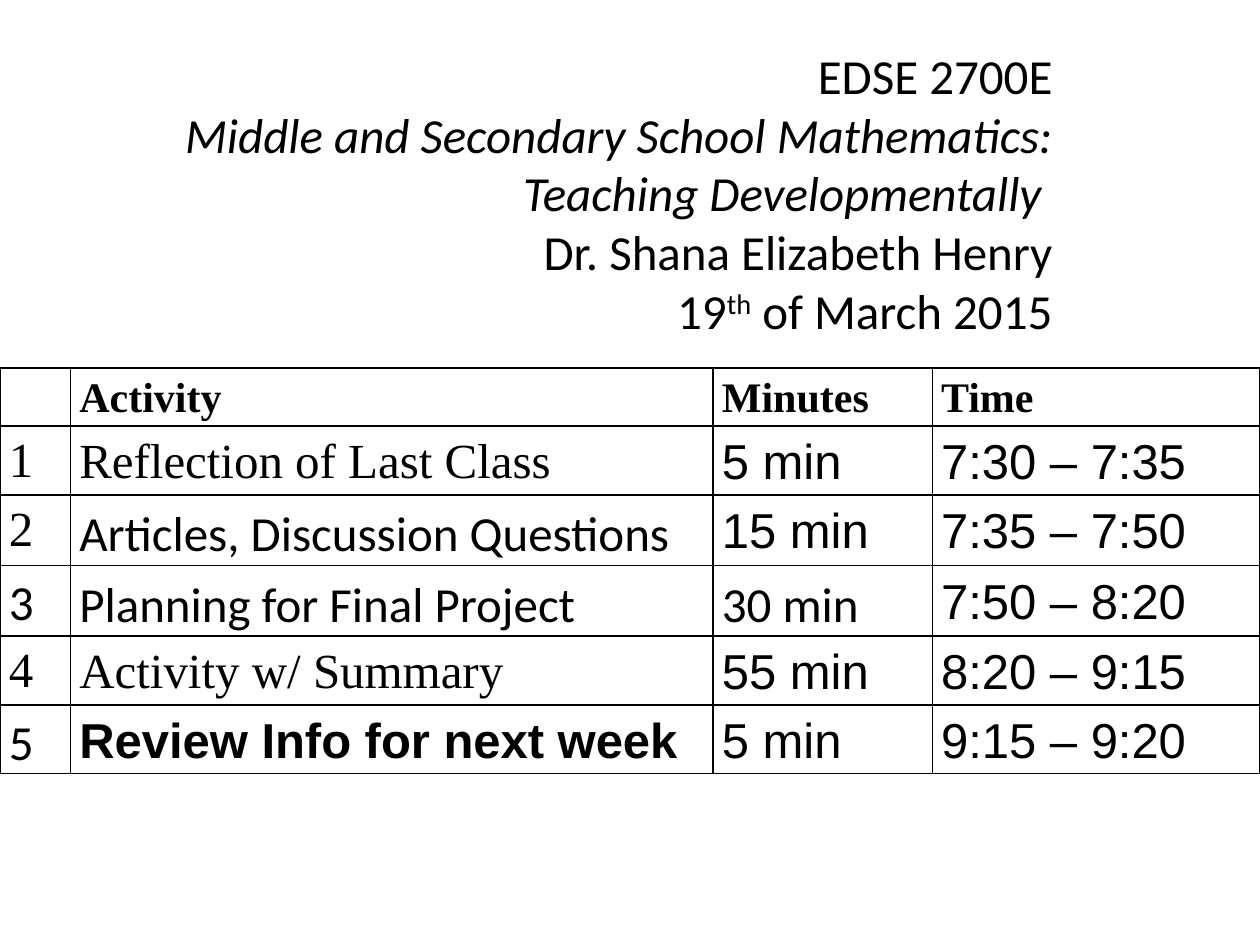
from lxml.etree import SubElement
from pptx import Presentation
from pptx.dml.color import RGBColor
from pptx.enum.text import PP_ALIGN as Align
from pptx.oxml.ns import qn
from pptx.util import Inches, Pt

COLORS = {"ink": "000000", "paper": "FFFFFF"}
SERIF, SANS, BODY = "Times New Roman", "Arial", "Calibri"

COURSE_LINES = [
    (["EDSE 2700E"], False),
    (["Middle and Secondary School Mathematics: Teaching Developmentally "], True),
    (["Dr. Shana Elizabeth Henry"], False),
    (["19", "th", " of March 2015"], False),
]
HEADINGS = ["", "Activity", "Minutes", "Time"]
AGENDA = [
    ["1", "Reflection of Last Class", "5 min", "7:30 – 7:35"],
    ["2", "Articles, Discussion Questions", "15 min", "7:35 – 7:50"],
    ["3", "Planning for Final Project", "30 min", "7:50 – 8:20"],
    ["4", "Activity w/ Summary", "55 min", "8:20 – 9:15"],
    ["5", "Review Info for next week", "5 min", "9:15 – 9:20"],
]
AGENDA_FONTS = [
    [SERIF, SERIF, SANS, SANS],
    [SERIF, BODY, SANS, SANS],
    [BODY, BODY, BODY, SANS],
    [SERIF, SERIF, SANS, SANS],
    [BODY, SANS, SANS, SANS],
]
COLUMN_WIDTHS = [0.56, 5.1, 1.74, 2.6]
ROW_HEIGHTS = [0.43, 0.53, 0.56, 0.56, 0.51, 0.54]


def style_font(font, name, size, bold=False, italic=False):
    """Set the typeface, size and emphasis in the ink colour."""
    font.name, font.size, font.bold, font.italic = name, Pt(size), bold, italic
    font.color.rgb = RGBColor.from_string(COLORS["ink"])


def add_borders(cell):
    """Draw a one-point line on all four sides of a cell."""
    properties = cell._tc.get_or_add_tcPr()
    for position, side in enumerate(("a:lnL", "a:lnR", "a:lnT", "a:lnB")):
        line = properties.makeelement(qn(side), {"w": str(Pt(1))})
        fill = SubElement(line, qn("a:solidFill"))
        SubElement(fill, qn("a:srgbClr"), val=COLORS["ink"])
        properties.insert(position, line)


def fill_cell(cell, text, name, size, bold, top):
    """Write one agenda cell; run fonts keep the row as low as its text."""
    cell.margin_left = cell.margin_right = Inches(0.07)
    cell.margin_top, cell.margin_bottom = Inches(top), 0
    cell.fill.solid()
    cell.fill.fore_color.rgb = RGBColor.from_string(COLORS["paper"])
    paragraph = cell.text_frame.paragraphs[0]
    paragraph.line_spacing = 1.15
    if text:
        run = paragraph.add_run()
        run.text = text
        style_font(run.font, name, size, bold)
    add_borders(cell)


def add_course_heading(slide, left, top, width, height):
    """Place the right-aligned course details in the given box."""
    frame = slide.shapes.add_textbox(left, top, width, height).text_frame
    frame.word_wrap = True
    for number, (parts, italic) in enumerate(COURSE_LINES):
        paragraph = frame.add_paragraph() if number else frame.paragraphs[0]
        paragraph.alignment = Align.RIGHT
        style_font(paragraph.font, BODY, 28, italic=italic)
        for part in parts:
            run = paragraph.add_run()
            run.text = part
            if part == "th":
                run.font._element.set("baseline", "30000")


def add_agenda(slide, left, top, width, height):
    """Place the timed agenda table in the given box."""
    agenda = slide.shapes.add_table(
        len(ROW_HEIGHTS), len(COLUMN_WIDTHS), left, top, width, height
    ).table
    agenda.first_row = agenda.horz_banding = False
    for column, share in zip(agenda.columns, COLUMN_WIDTHS):
        column.width = int(width * share / sum(COLUMN_WIDTHS))
    for row, share in zip(agenda.rows, ROW_HEIGHTS):
        row.height = int(height * share / sum(ROW_HEIGHTS))
    for c, heading in enumerate(HEADINGS):
        fill_cell(agenda.cell(0, c), heading, SERIF, 24, True, 0)
    for r, (entries, fonts) in enumerate(zip(AGENDA, AGENDA_FONTS), 1):
        for c, (entry, name) in enumerate(zip(entries, fonts)):
            bold = entry.startswith("Review")
            fill_cell(agenda.cell(r, c), entry, name, 28, bold, 0.01 if c else 0)


def main():
    """Build the class agenda slide and save it."""
    deck = Presentation()
    deck.slide_width, deck.slide_height = Inches(10), Inches(7.5)
    slide = deck.slides.add_slide(deck.slide_layouts[6])
    add_course_heading(slide, Inches(0.5), Inches(0.31), Inches(7.95), Inches(3.06))
    add_agenda(slide, 0, Inches(2.92), deck.slide_width, Inches(sum(ROW_HEIGHTS)))
    deck.save("out.pptx")


if __name__ == "__main__":
    main()
